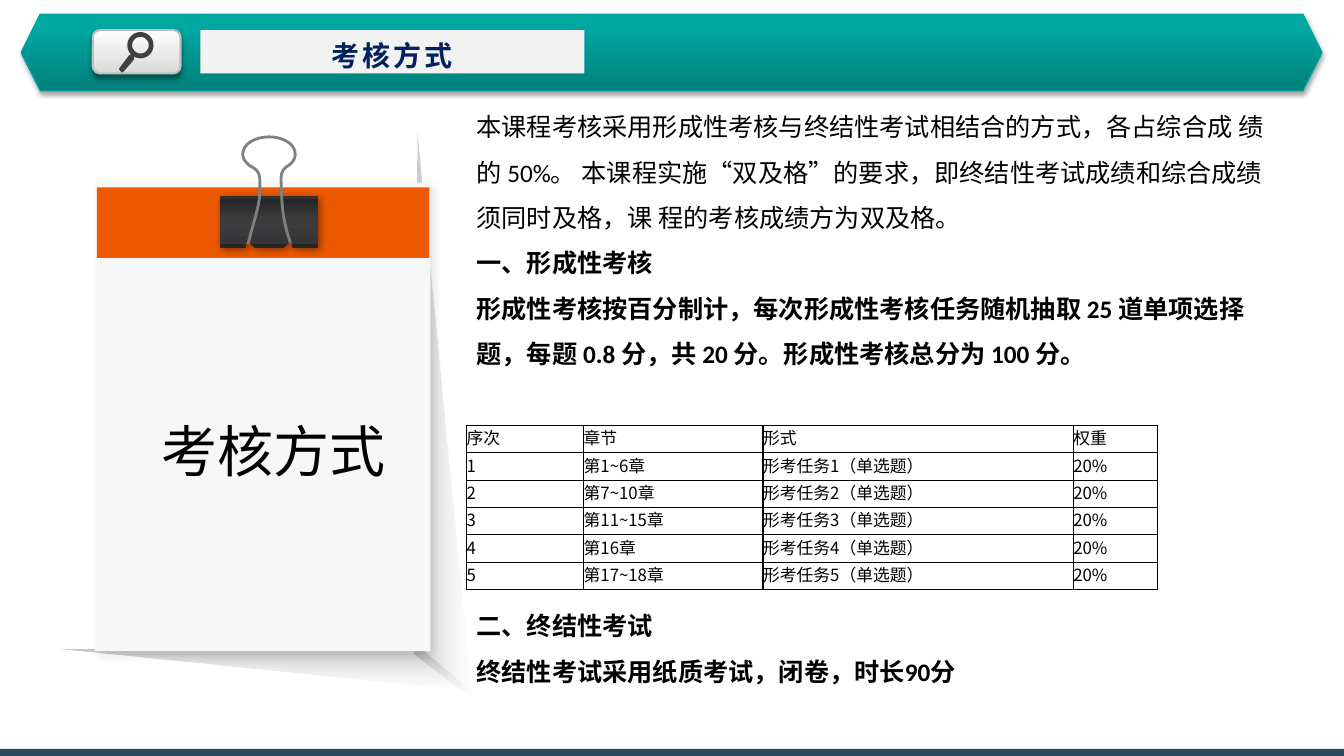
from math import cos, radians, sin

from lxml import etree
from pptx import Presentation
from pptx.dml.color import RGBColor
from pptx.enum.shapes import MSO_SHAPE
from pptx.enum.text import MSO_ANCHOR, PP_ALIGN
from pptx.oxml.ns import qn
from pptx.util import Cm, Pt

RECTANGLE, ROUNDED, HEXAGON = MSO_SHAPE.RECTANGLE, MSO_SHAPE.ROUNDED_RECTANGLE, MSO_SHAPE.HEXAGON
CENTER, LEFT, TOP = PP_ALIGN.CENTER, PP_ALIGN.LEFT, MSO_ANCHOR.TOP

TITLE = "考核方式"
BODY = [
    ("本课程考核采用形成性考核与终结性考试相结合的方式，各占综合成 绩的 50%。 本课程实施“双及格”的要求，"
     "即终结性考试成绩和综合成绩须同时及格，课 程的考核成绩方为双及格。", False, 0),
    ("一、形成性考核", True, 0),
    ("形成性考核按百分制计，每次形成性考核任务随机抽取 25 道单项选择题，每题 0.8 分，共 20 分。"
     "形成性考核总分为 100 分。", True, 0),
    ("二、终结性考试", True, 162),
    ("终结性考试采用纸质考试，闭卷，时长90分", True, 0),
]
CHAPTERS = ["第1~6章", "第7~10章", "第11~15章", "第16章", "第17~18章"]
ROWS = [("序次", "章节", "形式", "权重")] + [
    (str(number), chapter, f"形考任务{number}（单选题）", "20%")
    for number, chapter in enumerate(CHAPTERS, 1)
]
COLUMN_WIDTHS = [2.95, 4.52, 7.82, 2.13]
ROW_HEIGHT = 0.69

THEME = {
    "ink": "000000", "title": "002060", "strip": "F2F2F2", "footer": "294B5B",
    "paper": "F7F7F7", "orange": "ED5900", "icon": "404040", "wire": "808080",
    "banner_edge": "00A7A1", "button_edge": "BFBFBF",
    "banner": [(0, "00807B", 100), (80, "00A6A0", 100), (100, "00A6A1", 100)],
    "button": [(0, "D9D9D9", 100), (100, "FFFFFF", 100)],
    "fade": [(0, "F3F3F3", 12), (100, "808080", 44)],
    "clip": [(7, "313132", 100), (7, "262626", 100), (46, "3B3B3D", 100),
             (93, "363638", 100), (93, "262626", 100)],
    "latin": "Calibri", "cjk": "Noto Sans CJK SC",
    "title_size": 20, "body_size": 18, "label_size": 40, "table_size": 12,
}

ICON_CENTER, ICON_OUTER, ICON_INNER = (3.54, 1.14), 0.33, 0.21
ICON_HANDLE = [(3.38, 1.42), (3.38, 1.5), (3.12, 1.8), (3.07, 1.83),
               (3, 1.75), (3, 1.73), (3.25, 1.4), (3.3, 1.37)]
FADE_SIDE = [(10.44, 16.48), (11.89, 17.58), (10.52, 3.33)]
FADE_BOTTOM = [(10.64, 16.38), (11.89, 17.4), (1.52, 16.38)]
CLIP_BODY = [(5.54, 4.93), (8.03, 4.93), (8.03, 6.25), (7.37, 6.25), (7.37, 6.12), (7.26, 6.12),
             (7.14, 6.25), (6.43, 6.25), (6.3, 6.12), (6.2, 6.12), (6.2, 6.25), (5.54, 6.25)]
WIRE_START = (6.25, 6.15)
WIRE_CURVES = [
    ((6.45, 5.38), (6.55, 5.18), (6.55, 4.75)), ((6.55, 4.47), (6.58, 4.32), (6.32, 4.19)),
    ((6.2, 4.11), (6.12, 4.01), (6.12, 3.89)), ((6.12, 3.63), (6.43, 3.45), (6.78, 3.45)),
    ((7.14, 3.45), (7.44, 3.63), (7.44, 3.89)), ((7.44, 4.01), (7.37, 4.11), (7.24, 4.19)),
    ((7.04, 4.32), (7.09, 4.5), (7.09, 4.75)), ((7.11, 5.16), (7.11, 5.51), (7.32, 6.12)),
]


def assign(target, values):
    for name, value in values.items():
        setattr(target, name, value)


def add_color(parent, color, alpha=100):
    node = etree.SubElement(parent, qn("a:srgbClr"), val=color)
    if alpha < 100:
        etree.SubElement(node, qn("a:alpha"), val=str(alpha * 1000))


def style(shape, fill=None, angle=0, line=None, shadow=None):
    shape.shadow.inherit = False
    properties = shape._element.spPr
    if isinstance(fill, str):
        shape.fill.solid()
        shape.fill.fore_color.rgb = RGBColor.from_string(fill)
    else:
        shape.fill.background()
    if isinstance(fill, list):
        gradient = etree.Element(qn("a:gradFill"), rotWithShape="1")
        stops = etree.SubElement(gradient, qn("a:gsLst"))
        for position, color, alpha in fill:
            add_color(etree.SubElement(stops, qn("a:gs"), pos=str(position * 1000)), color, alpha)
        etree.SubElement(gradient, qn("a:lin"), ang=str(angle * 60000), scaled="0")
        properties.replace(properties.find(qn("a:noFill")), gradient)
    if line:
        color, width = line
        shape.line.color.rgb = RGBColor.from_string(color)
        shape.line.width = Pt(width)
    else:
        shape.line.fill.background()
    if shadow:
        alpha, blur, distance, direction = shadow
        effect = etree.SubElement(
            properties.find(qn("a:effectLst")), qn("a:outerShdw"), blurRad=str(Pt(blur)),
            dist=str(Pt(distance)), dir=str(direction * 60000), algn="tl", rotWithShape="0")
        add_color(effect, THEME["ink"], alpha)


def add_preset(page, kind, bounds, **look):
    style(page.shapes.add_shape(kind, *map(Cm, bounds)), **look)


def add_outline(page, contours, close=True, **look):
    builder = None
    for contour in contours:
        start, *rest = [(Cm(x), Cm(y)) for x, y in contour]
        if builder is None:
            builder = page.shapes.build_freeform(*start)
        else:
            builder.move_to(*start)
        builder.add_line_segments(rest, close=close)
    style(builder.convert_to_shape(), **look)


def arc(center, radius, first, last, step):
    return [(center[0] + radius * cos(radians(a)), center[1] + radius * sin(radians(a)))
            for a in range(first, last, step)]


def trace_curves(start, curves, steps=12):
    points = [start]
    for curve in curves:
        corners = (points[-1], *curve)
        for step in range(1, steps + 1):
            t = step / steps
            weights = ((1 - t) ** 3, 3 * t * (1 - t) ** 2, 3 * t * t * (1 - t), t ** 3)
            points.append(tuple(sum(w * c[axis] for w, c in zip(weights, corners)) for axis in (0, 1)))
    return points


def write(para, text, font, size, color="ink", bold=False, tracking=0):
    span = para.add_run()
    span.text = text
    assign(span.font, {"name": THEME[font], "size": Pt(THEME[size]), "bold": bold})
    span.font.color.rgb = RGBColor.from_string(THEME[color])
    if tracking:
        span._r.get_or_add_rPr().set("spc", str(tracking * 100))


def add_text(page, bounds, lines, align=LEFT, spacing=1.5, **look):
    frame = page.shapes.add_textbox(*map(Cm, bounds)).text_frame
    assign(frame, {"word_wrap": True, "vertical_anchor": TOP})
    for index, (text, bold, before) in enumerate(lines):
        para = frame.add_paragraph() if index else frame.paragraphs[0]
        assign(para, {"alignment": align, "line_spacing": spacing, "space_before": Pt(before)})
        write(para, text, bold=bold, **look)


def add_schedule(page, left, top):
    table = page.shapes.add_table(
        len(ROWS), len(COLUMN_WIDTHS), Cm(left), Cm(top),
        Cm(sum(COLUMN_WIDTHS)), Cm(ROW_HEIGHT * len(ROWS))).table
    assign(table, {"first_row": False, "horz_banding": False})
    for column, width in zip(table.columns, COLUMN_WIDTHS):
        column.width = Cm(width)
    for row, values in zip(table.rows, ROWS):
        row.height = Cm(ROW_HEIGHT)
        for cell, value in zip(row.cells, values):
            assign(cell, {"margin_left": 0, "margin_right": 0, "margin_top": 0,
                          "margin_bottom": 0, "vertical_anchor": TOP})
            cell.fill.background()
            write(cell.text_frame.paragraphs[0], value, "cjk", "table_size")
            for index, side in enumerate(("a:lnL", "a:lnR", "a:lnT", "a:lnB")):
                border = etree.Element(qn(side), w=str(Pt(1)))
                add_color(etree.SubElement(border, qn("a:solidFill")), THEME["ink"])
                cell._tc.get_or_add_tcPr().insert(index, border)


def add_banner(page):
    add_preset(page, HEXAGON, (0.53, 0.36, 32.79, 1.93), fill=THEME["banner"], angle=270,
               line=(THEME["banner_edge"], 0.75), shadow=(35, 3.1, 1.8, 90))
    add_preset(page, ROUNDED, (2.34, 0.76, 2.21, 1.09), fill=THEME["button"], angle=270,
               line=(THEME["button_edge"], 1.5), shadow=(40, 4, 3, 90))
    rim = arc(ICON_CENTER, ICON_OUTER, 140, 476, 5) + ICON_HANDLE
    hole = arc(ICON_CENTER, ICON_INNER, 360, 0, -10)
    add_outline(page, [rim, hole], fill=THEME["icon"])
    add_preset(page, RECTANGLE, (5.05, 0.76, 9.68, 1.09), fill=THEME["strip"])
    add_text(page, (5.44, 0.84, 8.89, 1.12), [(TITLE, True, 0)], CENTER, 1,
             font="cjk", size="title_size", color="title", tracking=2)


def add_clipboard(page):
    add_outline(page, [FADE_SIDE], fill=THEME["fade"], angle=180)
    add_outline(page, [FADE_BOTTOM], fill=THEME["fade"], angle=270)
    add_preset(page, RECTANGLE, (2.39, 4.6, 8.46, 11.81), fill=THEME["paper"], shadow=(10, 6, 4, 45))
    add_preset(page, RECTANGLE, (2.44, 4.72, 8.38, 1.78), fill=THEME["orange"])
    add_text(page, (2.95, 9.53, 7.9, 2.82), [(TITLE, False, 0)], CENTER, font="latin", size="label_size")
    add_outline(page, [CLIP_BODY], fill=THEME["clip"], angle=90, shadow=(40, 6, 2, 45))
    add_outline(page, [trace_curves(WIRE_START, WIRE_CURVES)], close=False, line=(THEME["wire"], 2))


def main():
    deck = Presentation()
    assign(deck, {"slide_width": Cm(33.87), "slide_height": Cm(19.05)})
    page = deck.slides.add_slide(deck.slide_layouts[6])
    add_preset(page, RECTANGLE, (0, 18.87, 33.87, 0.18), fill=THEME["footer"])
    add_banner(page)
    add_text(page, (11.76, 2.31, 20.4, 16.28), BODY, font="latin", size="body_size")
    add_clipboard(page)
    add_schedule(page, 11.76, 10.72)
    deck.save("out.pptx")


if __name__ == "__main__":
    main()
